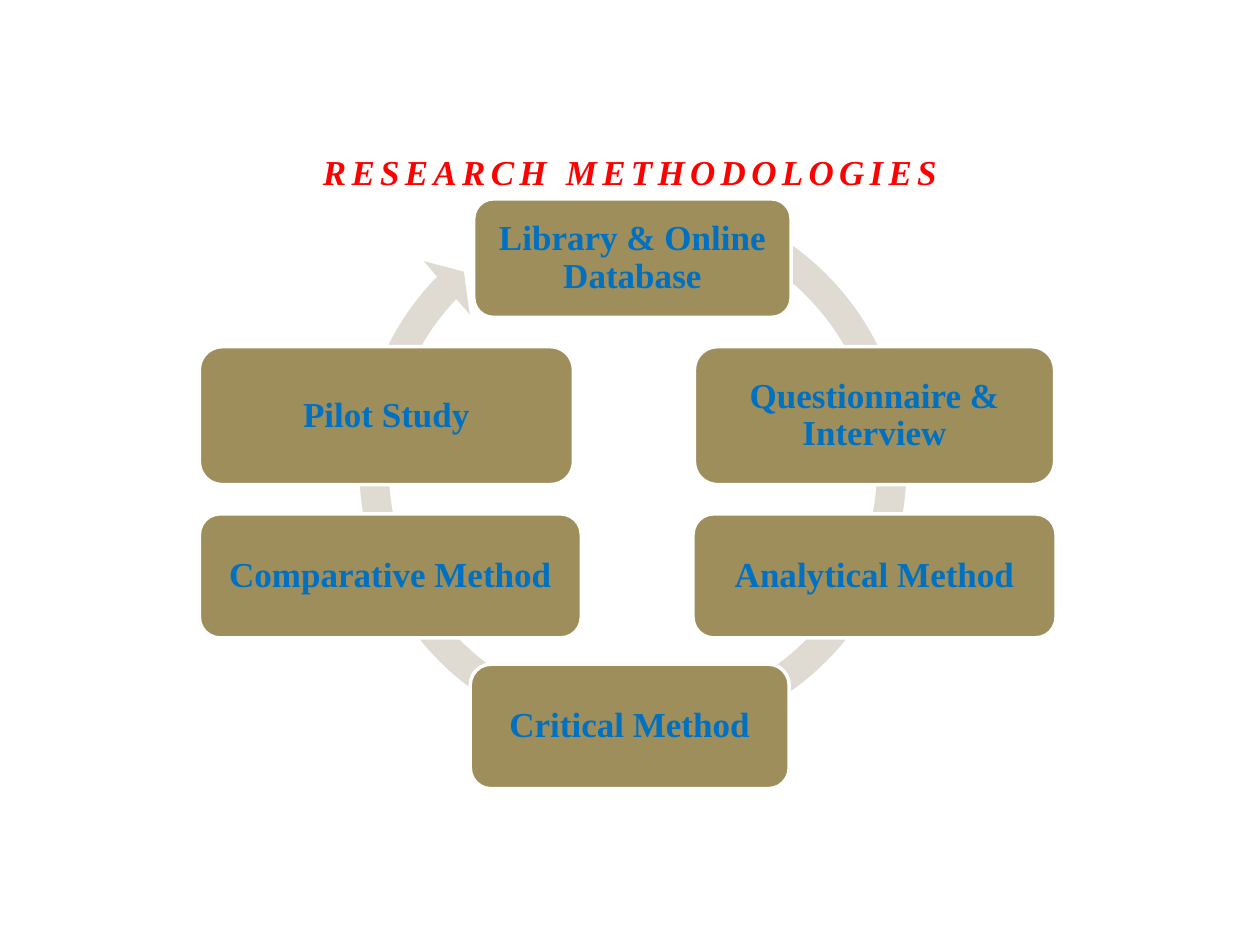
from dataclasses import dataclass

from pptx import Presentation
from pptx import util as u
from pptx.dml.color import RGBColor
from pptx.enum import shapes, text


@dataclass(frozen=True)
class Theme:
    face: str = "Times New Roman"
    size: float = 20
    edge: float = 2
    title: str = "FF0000"
    label: str = "0070C0"
    box: str = "9E8E5C"
    ring: str = "DFDBD2"
    line: str = "FFFFFF"


def write(frame, words, face, size, color, italic=None, track=0,
          lead=1.0, anchor=text.MSO_ANCHOR.MIDDLE, inset=None):
    frame.word_wrap = True
    frame.vertical_anchor = anchor
    if inset is not None:
        frame.margin_left = frame.margin_right = u.Cm(inset)
        frame.margin_top = frame.margin_bottom = u.Cm(inset)
    para = frame.paragraphs[0]
    para.alignment = text.PP_ALIGN.CENTER
    para.line_spacing = lead
    run = para.add_run()
    run.text = words
    font = run.font
    font.name, font.size = face, u.Pt(size)
    font.bold, font.italic = True, italic
    font.color.rgb = RGBColor.from_string(color)
    if track:
        run._r.get_or_add_rPr().set("spc", str(track * 100))


class Painter:
    def __init__(self, slide, theme):
        self.slide = slide
        self.theme = theme

    def shape(self, kind, area, fill):
        item = self.slide.shapes.add_shape(kind, *map(u.Cm, area))
        item.shadow.inherit = False
        item.fill.solid()
        item.fill.fore_color.rgb = RGBColor.from_string(fill)
        return item

    def title(self, words, area):
        box = self.slide.shapes.add_textbox(*map(u.Cm, area))
        write(box.text_frame, words, self.theme.face, self.theme.size,
              self.theme.title, italic=True, track=3, lead=1.5,
              anchor=text.MSO_ANCHOR.BOTTOM)

    def ring(self, area, turns):
        item = self.shape(shapes.MSO_SHAPE.CIRCULAR_ARROW, area, self.theme.ring)
        item.line.fill.background()
        for spot, turn in enumerate(turns):
            item.adjustments[spot] = turn

    def step(self, words, area):
        item = self.shape(shapes.MSO_SHAPE.ROUNDED_RECTANGLE, area, self.theme.box)
        item.line.color.rgb = RGBColor.from_string(self.theme.line)
        item.line.width = u.Pt(self.theme.edge)
        write(item.text_frame, words, self.theme.face, self.theme.size,
              self.theme.label, lead=0.9, inset=0.2)


def main():
    deck = Presentation()
    deck.slide_width, deck.slide_height = u.Cm(25.4), u.Cm(19.05)
    paint = Painter(deck.slides.add_slide(deck.slide_layouts[6]), Theme())

    paint.title("RESEARCH METHODOLOGIES", (3.81, 2.74, 17.78, 1.27))
    paint.ring((6.83, 3.5, 11.86, 11.86), (0.05, 3.13, 134.41, 176.05, 0.06))

    left, upper, lower = 4.02, (6.99, 2.78), (10.36, 2.5)
    steps = (
        ("Library & Online Database", 9.55, 6.4, (4.01, 2.39)),
        ("Questionnaire & Interview", 14, 7.26, upper),
        ("Analytical Method", 13.97, 7.32, lower),
        ("Critical Method", 9.48, 6.43, (13.39, 2.51)),
        ("Comparative Method", left, 7.7, lower),
        ("Pilot Study", left, 7.54, upper),
    )
    for words, x, wide, (y, high) in steps:
        paint.step(words, (x, y, wide, high))

    deck.save("out.pptx")


if __name__ == "__main__":
    main()
